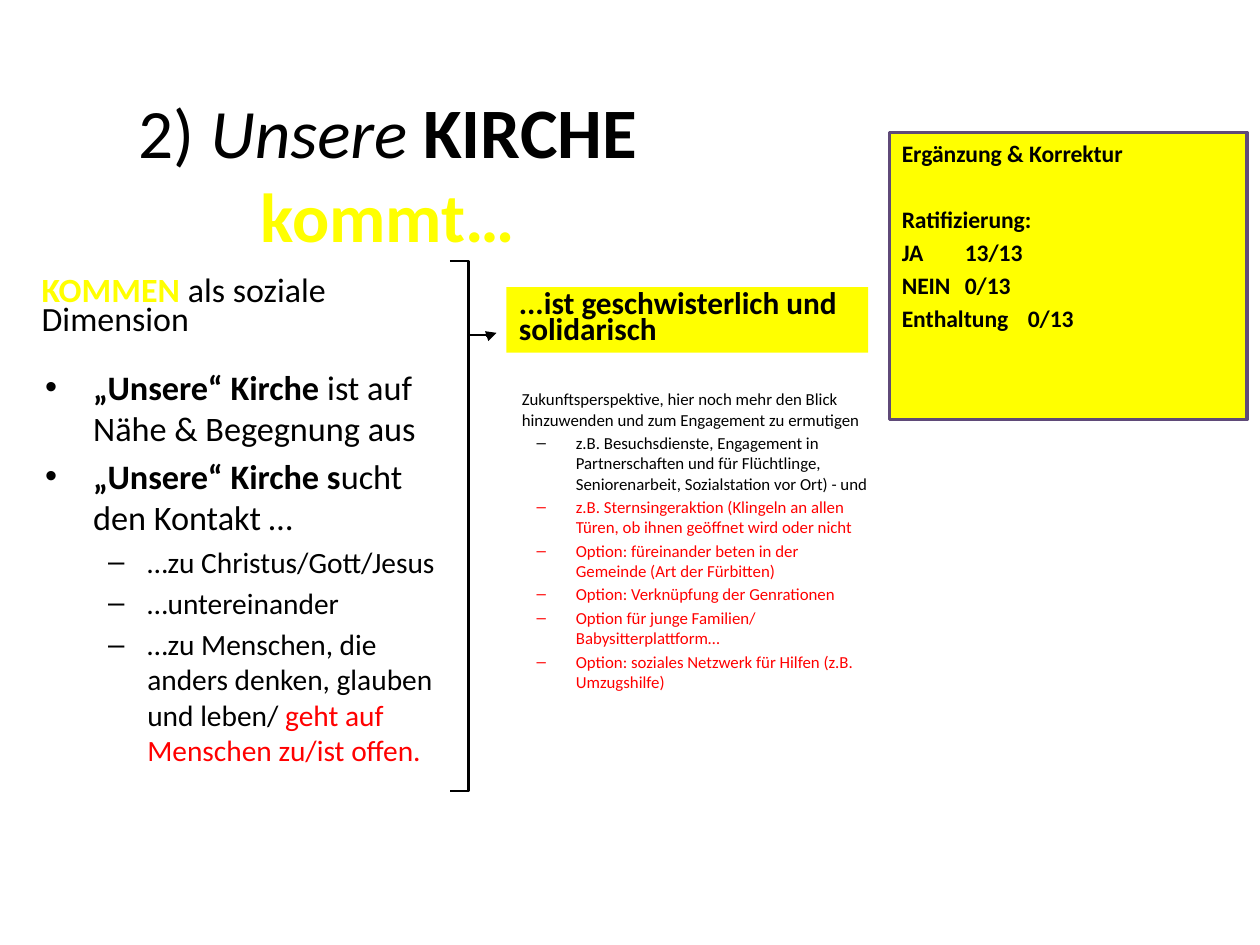
"""Build the slide on how the church comes to people."""
from lxml.etree import SubElement as Sub
from pptx import Presentation as Deck
from pptx.dml.color import RGBColor as Rgb
from pptx.enum.shapes import MSO_CONNECTOR as Link, MSO_SHAPE as Form
from pptx.enum.text import MSO_ANCHOR as Anchor, MSO_AUTO_SIZE as Auto, PP_ALIGN as Align
from pptx.oxml.ns import qn
from pptx.util import Cm, Pt

THEME = {
    "font": "Calibri",
    "ink": "000000", "red": "FF0000", "yellow": "FFFF00", "edge": "5F4A78",
    "title": 39.6, "church": 40.5, "topic": 19.4, "claim": 17.9,
    "list": 19.6, "sub": 16.8, "note": 9.6, "vote": 13.5,
}
BOLD, RED = {"bold": True}, {"color": "red"}
GOLD = {"bold": True, "color": "yellow"}

LEVELS = {
    "plain": (0, 0, 0, None),
    "lead": (1, 0.97, 0, None),
    "dot": (0, 0.97, -0.97, "•"),
    "dash": (1, 2.06, -0.79, "–"),
}

TITLE = [("2)", {}), (" Unsere ", {"italic": True}),
         ("KIRCHE", {"bold": True, "size": "church"}),
         (" ", {}), ("kommt…\v", GOLD)]
TOPIC = [("plain", "topic", [("KOMMEN ", GOLD), ("als soziale Dimension", {})])]
CLAIM = [("plain", "claim", [("...ist geschwisterlich und solidarisch ", BOLD)])]
POINTS = [
    ("dot", "list", [("„Unsere“ Kirche ", BOLD), ("ist auf Nähe & Begegnung aus", {})]),
    ("dot", "list", [("„Unsere“ Kirche s", BOLD), ("ucht den Kontakt …", {})]),
    ("dash", "sub", [("…zu Christus/Gott/Jesus", {})]),
    ("dash", "sub", [("…untereinander", {})]),
    ("dash", "sub", [("…zu Menschen, die anders denken, glauben und leben/ ", {}),
                     ("geht auf Menschen zu/ist offen.", RED)]),
]
IDEAS = [
    ("lead", "Zukunftsperspektive, hier noch mehr den Blick hinzuwenden und zum Engagement zu ermutigen", {}),
    ("dash", "z.B. Besuchsdienste, Engagement in Partnerschaften und für Flüchtlinge, Seniorenarbeit, Sozialstation vor Ort) - und", {}),
    ("dash", "z.B. Sternsingeraktion (Klingeln an allen Türen, ob ihnen geöffnet wird oder nicht", RED),
    ("dash", "Option: füreinander beten in der Gemeinde (Art der Fürbitten)", RED),
    ("dash", "Option: Verknüpfung der Genrationen", RED),
    ("dash", "Option für junge Familien/ Babysitterplattform…", RED),
    ("dash", "Option: soziales Netzwerk für Hilfen (z.B. Umzugshilfe)", RED),
]
VOTES = ["Ergänzung & Korrektur", "Ratifizierung:", "JA\t13/13", "NEIN\t0/13", "Enthaltung\t0/13"]

AREAS = {
    "title": (0.58, 2.82, 14.48, 2.97),
    "votes": (17.93, 2.67, 7.21, 5.79),
    "claim": (10.21, 5.79, 7.29, 1.32),
    "ideas": (9.3, 7.72, 8.43, 8.23),
    "topic": (0.66, 5.54, 8.84, 1.32),
    "points": (0.66, 7.26, 8.41, 8.23),
    "brace": (9.07, 5.26, 0.74, 10.69),
}
ARROW = (9.8, 6.78, 10.01, 6.71)


def paint(name):
    return Rgb.from_string(THEME[name])


def place(name):
    return [Cm(x) for x in AREAS[name]]


def assign(item, values):
    for key, value in values.items():
        setattr(item, key, value)


def write(para, runs, size):
    for text, style in runs:
        part = {"size": size, "color": "ink", "bold": False, "italic": False, **style}
        for i, piece in enumerate(text.split("\v")):
            if i:
                para.add_line_break()
            if piece or not i:
                run = para.add_run()
                run.text = piece
                assign(run.font, {"name": THEME["font"], "size": Pt(THEME[part["size"]]),
                                  "bold": part["bold"], "italic": part["italic"]})
                run.font.color.rgb = paint(part["color"])
    para.font.size = Pt(THEME[size])


def fill_text(shape, paras, tight=False):
    frame = shape.text_frame
    assign(frame, {"word_wrap": True, "auto_size": Auto.NONE, "vertical_anchor": Anchor.TOP})
    for i, (kind, size, runs) in enumerate(paras):
        para = frame.paragraphs[0] if i == 0 else frame.add_paragraph()
        level, left, hang, mark = LEVELS[kind]
        assign(para, {"alignment": Align.LEFT, "level": level,
                      "line_spacing": 0.7 if tight else 1.0,
                      "space_before": Pt(round(THEME[size] * 0.2, 1) if i else 0)})
        props = para._p.get_or_add_pPr()
        props.set("marL", str(Cm(left)))
        props.set("indent", str(Cm(hang)))
        if mark:
            Sub(props, qn("a:buFont"), typeface="Arial")
            Sub(props, qn("a:buChar"), char=mark)
        write(para, runs, size)
    return frame


def panel(slide, name, edge=None):
    shape = slide.shapes.add_shape(Form.RECTANGLE, *place(name))
    shape.shadow.inherit = False
    shape.fill.solid()
    shape.fill.fore_color.rgb = paint("yellow")
    if edge:
        shape.line.color.rgb = paint(edge)
        shape.line.width = Pt(2)
    else:
        shape.line.fill.background()
    return shape


def head(slide):
    title = slide.shapes.title
    assign(title, dict(zip(("left", "top", "width", "height"), place("title"))))
    frame = title.text_frame
    assign(frame, {"word_wrap": True, "auto_size": Auto.NONE, "vertical_anchor": Anchor.MIDDLE})
    frame.paragraphs[0].alignment = Align.CENTER
    write(frame.paragraphs[0], TITLE, "title")


def link(slide):
    brace = slide.shapes.add_shape(Form.RIGHT_BRACE, *place("brace"))
    brace.shadow.inherit = False
    brace.adjustments[0], brace.adjustments[1] = 0, 0.14
    brace.fill.background()
    arrow = slide.shapes.add_connector(Link.STRAIGHT, *[Cm(x) for x in ARROW])
    for shape, width in ((brace, 1.5), (arrow, 0.75)):
        shape.line.color.rgb = paint("ink")
        shape.line.width = Pt(width)
    Sub(arrow.line._get_or_add_ln(), qn("a:tailEnd"), type="triangle")
    Sub(arrow._element.spPr, qn("a:effectLst"))


def main():
    deck = Deck()
    assign(deck, {"slide_width": Cm(25.4), "slide_height": Cm(19.05)})
    slide = deck.slides.add_slide(deck.slide_layouts[5])
    boxes = slide.shapes.add_textbox
    head(slide)
    votes = fill_text(panel(slide, "votes", "edge"),
                      [("plain", "vote", [(text, BOLD)]) for text in VOTES])
    votes.paragraphs[1].space_before = Pt(21.6)
    fill_text(panel(slide, "claim"), CLAIM, True)
    fill_text(boxes(*place("ideas")), [(kind, "note", [(text, style)]) for kind, text, style in IDEAS])
    topic = fill_text(boxes(*place("topic")), TOPIC, True)
    assign(topic, {"margin_left": Cm(0.18), "margin_right": Cm(0.18),
                   "margin_top": Cm(0.1), "margin_bottom": Cm(0.1)})
    fill_text(boxes(*place("points")), POINTS)
    link(slide)
    deck.save("out.pptx")


if __name__ == "__main__":
    main()
